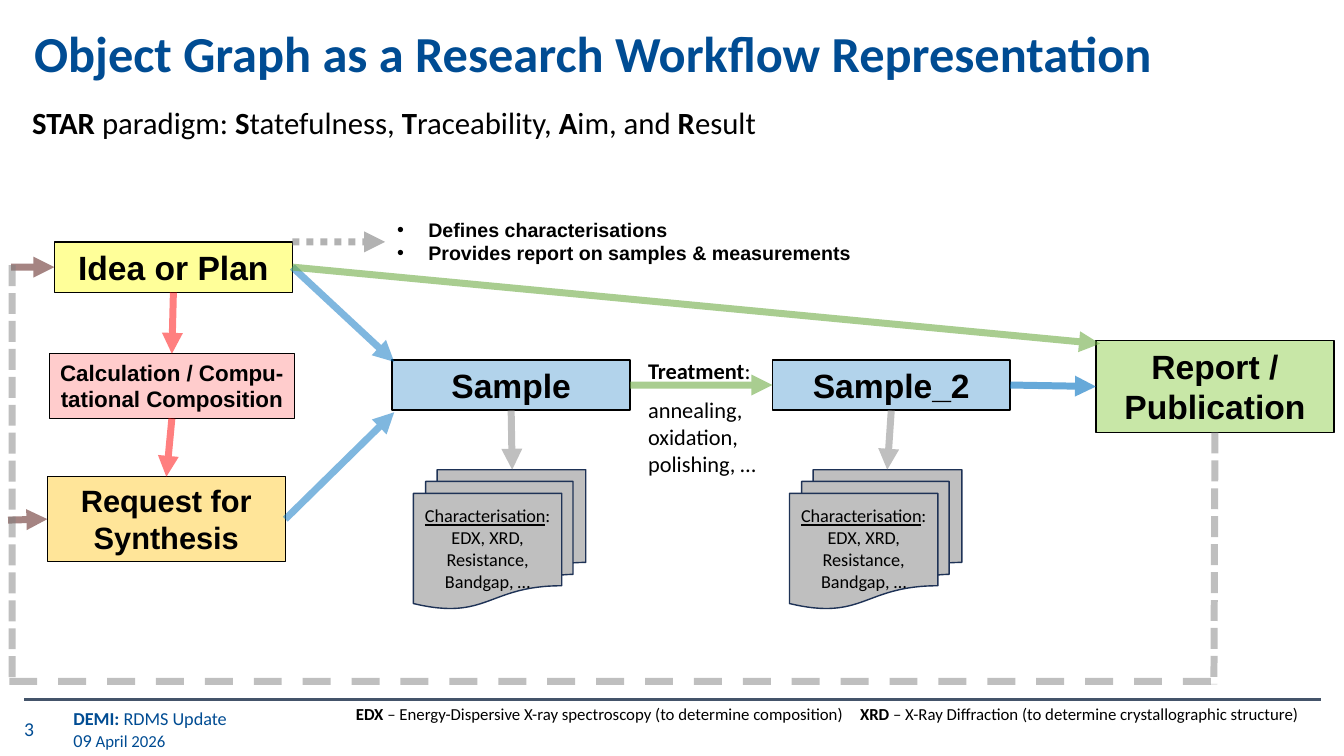
"""Build the slide on the object graph of a research workflow."""
from dataclasses import dataclass, field
from typing import NamedTuple, Optional, Union

from lxml.etree import SubElement
from pptx import Presentation
from pptx.dml.color import RGBColor
from pptx.enum.dml import MSO_LINE
from pptx.enum.shapes import MSO_CONNECTOR, MSO_SHAPE
from pptx.enum.text import MSO_ANCHOR, PP_ALIGN
from pptx.oxml.ns import qn
from pptx.util import Inches, Pt

HUES = {"black": "000000", "navy": "004C93", "edge": "1E3256", "slate": "44546A",
        "grey": "808080", "red": "FF0000", "blue": "0070C0", "gold": "FFC000",
        "yellow": "FFFF00", "lime": "92D050", "green": "70AD47", "brown": "4C0B07"}
BOLD = {"bold": True}
UNDER = {"underline": True}
TOP, LEFT, LOW, RIGHT = range(4)


class Run(NamedTuple):
    text: str
    form: dict = {}


class Side(NamedTuple):
    name: str
    site: int


class Point(NamedTuple):
    x: float
    y: float


End = Union[Point, Side]


@dataclass
class Text:
    at: tuple
    lines: list
    size: float
    face: str = "Calibri"
    hue: str = "black"
    inset: tuple = (0.1, 0.05, 0.1, 0.05)
    frame: dict = field(default_factory=dict)
    para: dict = field(default_factory=dict)
    gaps: dict = field(default_factory=dict)
    mark: str = ""


@dataclass
class Node:
    name: str
    text: Text
    fill: str
    alpha: int
    kind: MSO_SHAPE = MSO_SHAPE.RECTANGLE
    edge: str = "black"


@dataclass
class Link:
    start: End
    stop: End
    hue: str
    alpha: int = 50
    dash: Optional[MSO_LINE] = None
    head: bool = True
    width: float = 5


def color(hue: str) -> RGBColor:
    return RGBColor.from_string(HUES[hue])


def fade(shape, alpha: int) -> None:
    tone = next(shape.element.spPr.iter(qn("a:srgbClr")))
    SubElement(tone, qn("a:alpha"), val=str(alpha * 1000))


def write(shape, text: Text) -> None:
    frame = shape.text_frame
    left, top, right, low = map(Inches, text.inset)
    form = {"word_wrap": True, "vertical_anchor": MSO_ANCHOR.TOP, "margin_left": left,
            "margin_top": top, "margin_right": right, "margin_bottom": low, **text.frame}
    for key, val in form.items():
        setattr(frame, key, val)
    for num, runs in enumerate(text.lines):
        para = frame.add_paragraph() if num else frame.paragraphs[0]
        if text.mark:
            props = para._p.get_or_add_pPr()
            props.set("marL", str(Inches(0.31)))
            props.set("indent", str(-Inches(0.31)))
            SubElement(props, qn("a:buFont"), typeface="Arial")
            SubElement(props, qn("a:buChar"), char=text.mark)
        for key, val in {"alignment": PP_ALIGN.LEFT, **text.para}.items():
            setattr(para, key, val)
        if num in text.gaps:
            para.space_before = Pt(text.gaps[num])
        for run in runs:
            for row, part in enumerate(run.text.split("\n")):
                if row:
                    para.add_line_break()
                if not part:
                    continue
                item = para.add_run()
                item.text = part
                item.font.color.rgb = color(text.hue)
                form = {"name": text.face, "size": Pt(text.size), "bold": False, **run.form}
                for key, val in form.items():
                    setattr(item.font, key, val)


def label(slide, text: Text) -> None:
    write(slide.shapes.add_textbox(*map(Inches, text.at)), text)


def draw(slide, node: Node):
    shape = slide.shapes.add_shape(node.kind, *map(Inches, node.text.at))
    shape.shadow.inherit = False
    shape.fill.solid()
    shape.fill.fore_color.rgb = color(node.fill)
    fade(shape, node.alpha)
    shape.line.color.rgb = color(node.edge)
    shape.line.width = Pt(1)
    write(shape, node.text)
    return shape


def join(slide, link: Link, made: dict) -> None:
    ends = [end if isinstance(end, Point) else Point(0, 0) for end in (link.start, link.stop)]
    line = slide.shapes.add_connector(
        MSO_CONNECTOR.STRAIGHT, *(Inches(val) for end in ends for val in end))
    for end, bind in ((link.start, line.begin_connect), (link.stop, line.end_connect)):
        if isinstance(end, Side):
            bind(made[end.name], end.site)
    line.line.color.rgb = color(link.hue)
    line.line.width = Pt(link.width)
    fade(line, link.alpha)
    if link.dash:
        line.line.dash_style = link.dash
    if link.head:
        SubElement(line.line._get_or_add_ln(), qn("a:tailEnd"), type="triangle")
    SubElement(line.element.spPr, qn("a:effectLst"))


def box(name: str, at: tuple, words: str, size: float, fill: str, alpha: int) -> Node:
    text = Text(at, [[Run(words, BOLD)]], size, "Arial", para={"alignment": PP_ALIGN.CENTER})
    return Node(name, text, fill, alpha)


def stack(name: str, left: float) -> Node:
    text = Text((left, 4.66, 1.71, 1.38),
                [[Run("Characterisation", UNDER), Run(":\nEDX, XRD, Resistance, Bandgap, …")]],
                13, frame=MID, para={"alignment": PP_ALIGN.CENTER})
    return Node(name, text, "grey", 50, MSO_SHAPE.FLOWCHART_MULTIDOCUMENT, "edge")


MID = {"vertical_anchor": MSO_ANCHOR.MIDDLE}
NODES = [
    stack("tests", 4.1), stack("tests_2", 7.83),
    box("calc", (0.49, 3.51, 2.43, 0.64), "Calculation / Compu-tational Composition", 16, "red", 20),
    box("sample", (3.89, 3.57, 2.36, 0.5), "Sample", 24, "blue", 30),
    box("sample_2", (7.66, 3.57, 2.36, 0.5), "Sample_2", 24, "blue", 30),
    box("request", (0.47, 4.73, 2.36, 0.84), "Request for Synthesis", 22, "gold", 40),
    box("idea", (0.54, 2.4, 2.36, 0.5), "Idea or Plan", 24, "yellow", 40),
    box("report", (10.87, 3.38, 2.36, 0.91), "Report / Publication", 24, "lime", 50)]
LINKS = [
    Link(Point(0.24, 6.94), Point(13.1, 6.94), "slate", 100, head=False, width=1.5),
    Link(Side("sample", LOW), Point(5.08, 4.66), "grey"),
    Link(Side("sample_2", LOW), Point(8.8, 4.66), "grey"),
    Link(Side("idea", LOW), Side("calc", TOP), "red"),
    Link(Side("calc", LOW), Side("request", TOP), "red"),
    Link(Side("request", RIGHT), Point(3.91, 4.09), "blue"),
    Link(Side("idea", RIGHT), Point(3.91, 3.59), "blue"),
    Link(Side("sample", RIGHT), Side("sample_2", LEFT), "green", 60),
    Link(Side("sample_2", RIGHT), Side("report", LEFT), "blue", 60),
    Link(Point(0.08, 5.16), Side("request", LEFT), "brown"),
    Link(Point(0.11, 2.65), Side("idea", LEFT), "brown"),
    Link(Side("report", LOW), Point(12.04, 6.79), "grey", dash=MSO_LINE.SQUARE_DOT, head=False),
    Link(Point(12.01, 6.76), Point(0.09, 6.76), "grey", dash=MSO_LINE.DASH, head=False),
    Link(Point(0.12, 2.63), Point(0.12, 6.76), "grey", dash=MSO_LINE.SQUARE_DOT, head=False),
    Link(Point(2.9, 2.4), Point(3.82, 2.4), "grey", 60, MSO_LINE.ROUND_DOT),
    Link(Side("idea", RIGHT), Point(10.91, 3.41), "green", 60)]
TEXTS = [
    Text((0.24, 0.12, 12.87, 0.87), [[Run("Object Graph as a Research Workflow Representation", BOLD)]],
         36, hue="navy", inset=(0.1, 0.04, 0.1, 0.04), frame=MID, para={"line_spacing": 0.9}),
    Text((0.22, 0.98, 11.6, 0.47),
         [[Run("STAR", BOLD), Run(" paradigm: "), Run("S", BOLD), Run("tatefulness, "), Run("T", BOLD),
           Run("raceability, "), Run("A", BOLD), Run("im, and "), Run("R", BOLD), Run("esult")]], 22),
    Text((3.84, 2.11, 4.9, 0.57), [[Run("Defines characterisations", BOLD)],
         [Run("Provides report on samples & measurements", BOLD)]], 14, "Arial", mark="•"),
    Text((6.33, 3.49, 1.33, 1.31), [[Run("Treatment", BOLD), Run(":")], [Run("annealing,")],
         [Run("oxidation,")], [Run("polishing, …")]], 16, gaps={1: 9}),
    Text((0.24, 6.99, 0.53, 0.47), [[Run("3")]], 14, hue="navy", inset=(0, 0.05, 0.1, 0.05), frame=MID),
    Text((0.63, 6.97, 2.12, 0.53), [[Run("DEMI: ", BOLD), Run("RDMS Update\n09"),
         Run(" April 2026", {"size": Pt(12)})]], 13, hue="navy", frame=MID),
    Text((3.49, 6.96, 9.84, 0.53),
         [[Run("EDX", BOLD), Run(" – Energy-Dispersive X-ray spectroscopy (to determine composition)\t"),
           Run("XRD", BOLD), Run(" – X-Ray Diffraction (to determine crystallographic structure)")]],
         12, inset=(0.04, 0.02, 0.04, 0))]


def main() -> None:
    deck = Presentation()
    deck.slide_width, deck.slide_height = Inches(13.33), Inches(7.5)
    slide = deck.slides.add_slide(deck.slide_layouts[6])
    made = {node.name: draw(slide, node) for node in NODES}
    for link in LINKS:
        join(slide, link, made)
    for text in TEXTS:
        label(slide, text)
    deck.save("out.pptx")


if __name__ == "__main__":
    main()
